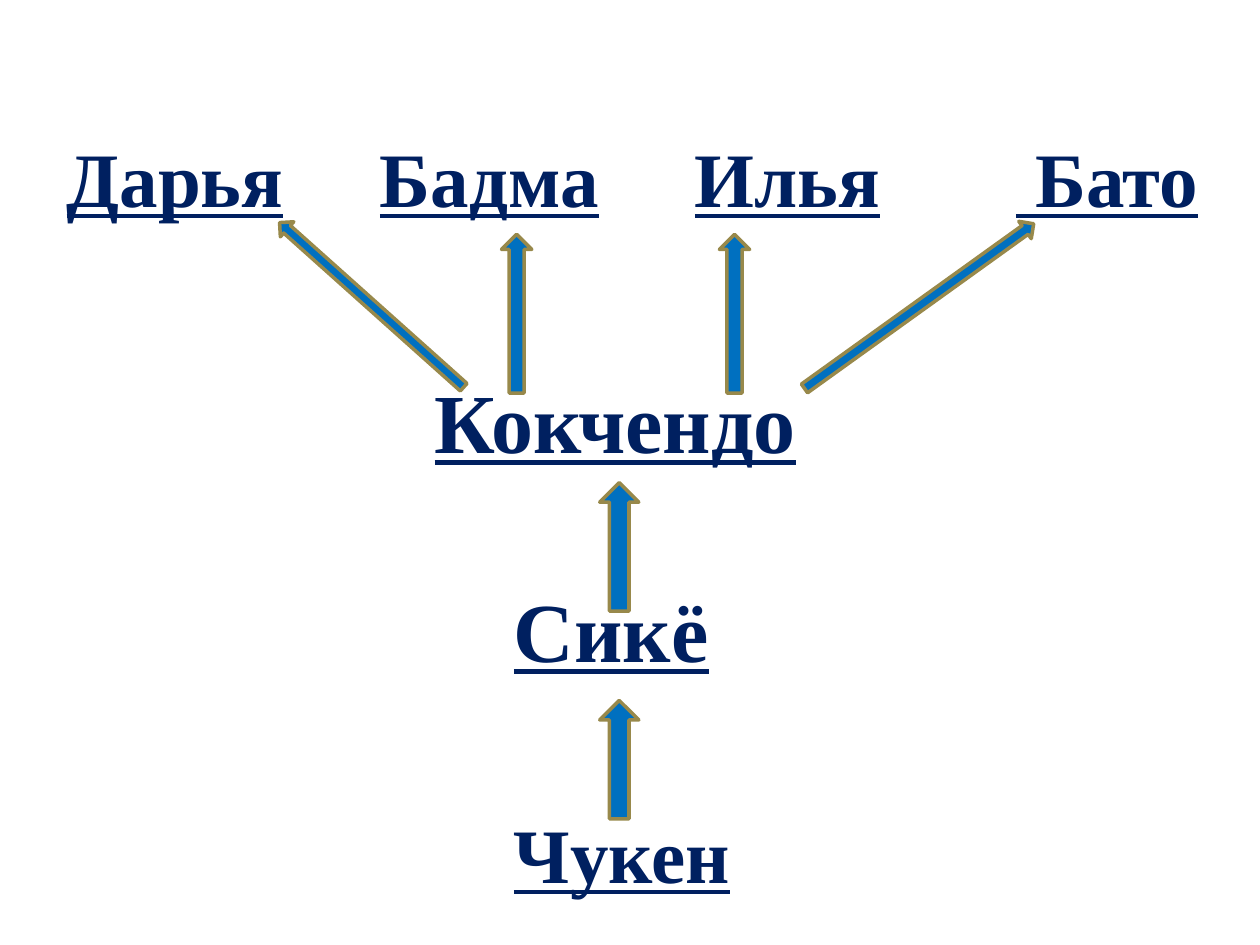
from lxml.etree import SubElement
from pptx import Presentation
from pptx.dml.color import RGBColor
from pptx.enum.shapes import MSO_SHAPE as Preset
from pptx.enum.text import MSO_AUTO_SIZE as AutoSize
from pptx.oxml.ns import qn
from pptx.util import Pt

NAVY, BLUE, OLIVE = "002060", "0070C0", "98894B"
FONT = "Times New Roman"

CHILDREN = ["Дарья", "Бадма", "Илья", " Бато"]
CHILD_TABS = [179, 359, 542.5]
CHILDREN_BOX = (31, 71.3, 689, 60.5)

ANCESTORS = [
    ("Кокчендо", 48, (241.2, 207.4, 226.8, 65.5)),
    ("Сикё", 48, (286.6, 326.9, 141.8, 65.5)),
    ("Чукен", 44, (286.6, 457.2, 168.5, 60.5)),
]

# box before rotation, rotation in degrees
DESCENT_ARROWS = [
    ((342.7, 400.3, 22.3, 67.7), 0),
    ((342.7, 275.8, 22.3, 73.4), 0),
    ((206.6, 103.7, 11.5, 141.1), 311.8),
    ((286.6, 133.9, 17.3, 90.7), 0),
    ((411.1, 133.9, 17.3, 90.7), 0),
    ((519.1, 94.3, 12.2, 161.3), 54.3),
]


def color(hex_value):
    return RGBColor.from_string(hex_value)


def add_run(paragraph, text, size, underline=True):
    run = paragraph.add_run()
    run.text = text
    font = run.font
    font.name, font.size = FONT, Pt(size)
    font.bold, font.underline = True, underline
    font.color.rgb = color(NAVY)


def add_label(slide, box):
    """Add an empty wrapping text box and return its paragraph."""
    frame = slide.shapes.add_textbox(*map(Pt, box)).text_frame
    frame.word_wrap = True
    frame.auto_size = AutoSize.SHAPE_TO_FIT_TEXT
    return frame.paragraphs[0]


def add_ancestor(slide, name, size, box):
    add_run(add_label(slide, box), name, size)


def add_children(slide, box):
    """Set the children's names on one line, spaced by tab stops."""
    line = add_label(slide, box)
    stops = SubElement(line._p.get_or_add_pPr(), qn("a:tabLst"))
    for position in CHILD_TABS:
        SubElement(stops, qn("a:tab"), pos=str(Pt(position)), algn="l")
    for index, name in enumerate(CHILDREN):
        if index:
            add_run(line, "\t", 44, underline=False)
        add_run(line, name, 44)


def add_descent_arrow(slide, box, rotation):
    arrow = slide.shapes.add_shape(Preset.UP_ARROW, *map(Pt, box))
    arrow.rotation = rotation
    arrow.shadow.inherit = False
    arrow.fill.solid()
    arrow.fill.fore_color.rgb = color(BLUE)
    arrow.line.color.rgb = color(OLIVE)
    arrow.line.width = Pt(2)


def main():
    deck = Presentation()
    deck.slide_width, deck.slide_height = Pt(720), Pt(540)
    slide = deck.slides.add_slide(deck.slide_layouts[6])
    for name, size, box in ANCESTORS:
        add_ancestor(slide, name, size, box)
    add_children(slide, CHILDREN_BOX)
    for box, rotation in DESCENT_ARROWS:
        add_descent_arrow(slide, box, rotation)
    deck.save("out.pptx")


if __name__ == "__main__":
    main()
